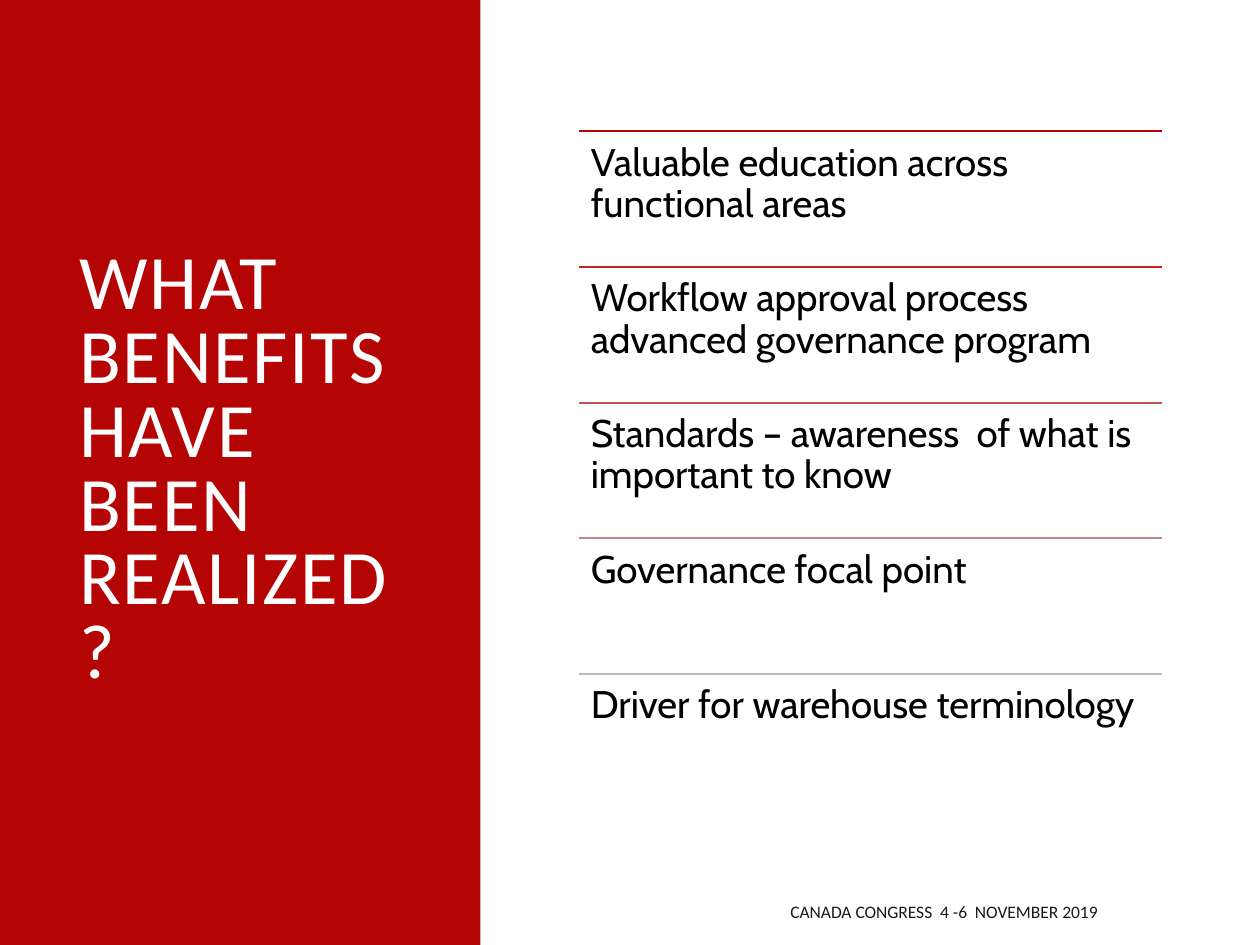
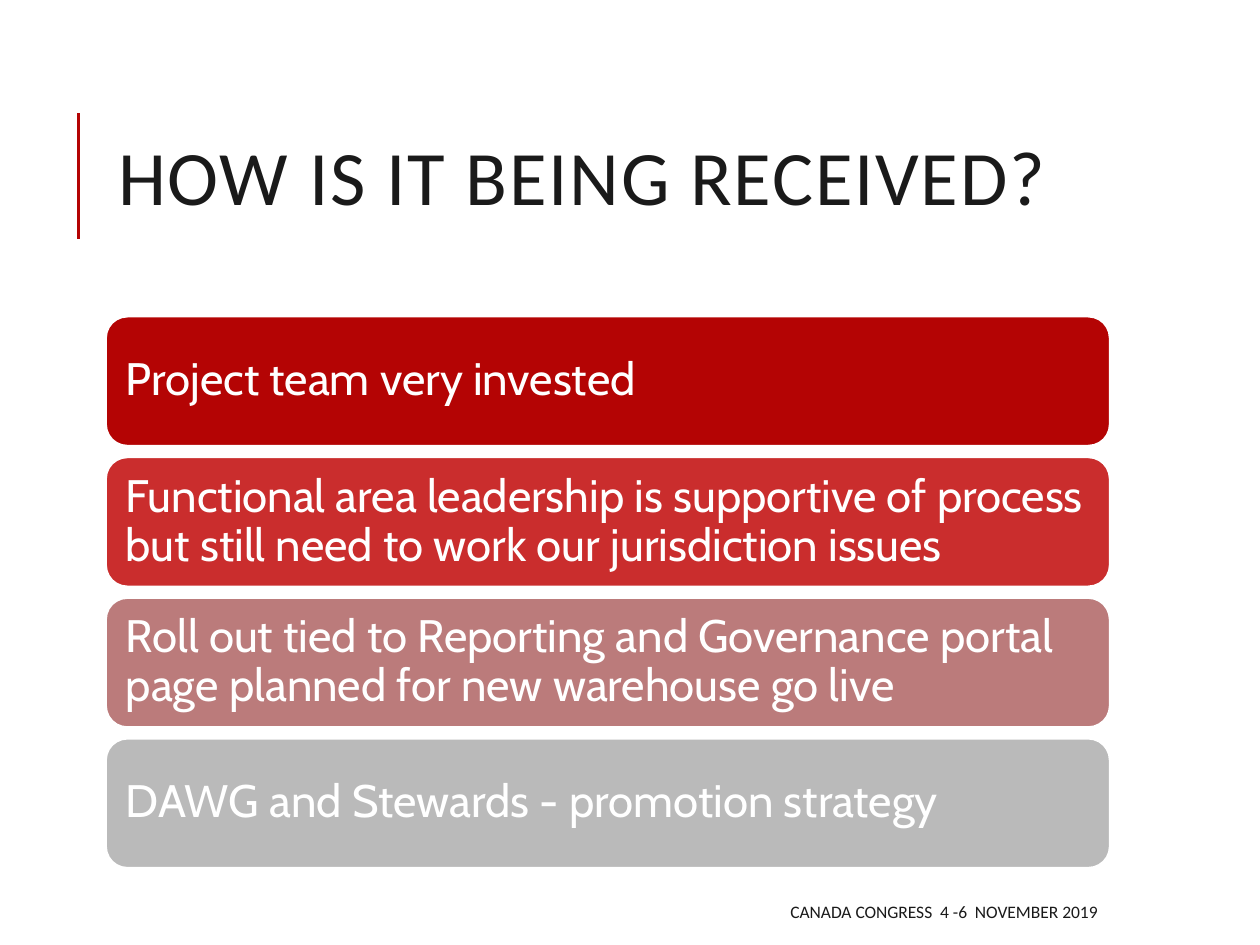
"""Build two slides on the benefits and the reception of a governance program."""
from lxml import etree
from pptx import Presentation
from pptx.dml.color import RGBColor
from pptx.enum.shapes import MSO_CONNECTOR, MSO_SHAPE
from pptx.enum.text import MSO_ANCHOR, PP_ALIGN
from pptx.oxml.ns import qn
from pptx.util import Pt

RED = RGBColor(0xB4, 0x04, 0x04)
GREY = RGBColor(0xBA, 0xBA, 0xBA)
INK = RGBColor(0x1A, 0x1A, 0x1A)
BLACK = RGBColor(0, 0, 0)
WHITE = RGBColor(0xFF, 0xFF, 0xFF)
STRAIGHT = MSO_CONNECTOR.STRAIGHT
RECTANGLE, ROUNDED = MSO_SHAPE.RECTANGLE, MSO_SHAPE.ROUNDED_RECTANGLE
TOP, MIDDLE = MSO_ANCHOR.TOP, MSO_ANCHOR.MIDDLE
LEFT, RIGHT = PP_ALIGN.LEFT, PP_ALIGN.RIGHT
HEADING_FONT, BODY_FONT = "Calibri", "Cabin"

FOOTER = "CANADA CONGRESS  4 -6  NOVEMBER 2019"
BENEFITS_TITLE = "WHAT BENEFITS HAVE BEEN REALIZED?"
BENEFITS = [
    ("Valuable education across functional areas", RED),
    ("Workflow approval process advanced governance program", RGBColor(0xC6, 0x21, 0x21)),
    ("Standards – awareness  of what is important to know", RGBColor(0xC2, 0x54, 0x54)),
    ("Governance focal point", RGBColor(0xB9, 0x8C, 0x8C)),
    ("Driver for warehouse terminology", GREY),
]
RECEPTION_TITLE = "HOW IS IT BEING RECEIVED?"
RECEPTION = [
    ("Project team very invested", RED),
    ("Functional area leadership is supportive of process but still need to work our "
     "jurisdiction issues", RGBColor(0xCA, 0x2D, 0x2D)),
    ("Roll out tied to Reporting and Governance portal page planned for new warehouse go live",
     RGBColor(0xBB, 0x7B, 0x7B)),
    ("DAWG and Stewards - promotion strategy", GREY),
]


def write(box, text, font, size, color, anchor=MIDDLE, align=LEFT, spacing=1.0, inset=None):
    frame = box.text_frame
    frame.word_wrap = True
    frame.vertical_anchor = anchor
    if inset is not None:
        frame.margin_left = frame.margin_right = Pt(inset)
        frame.margin_top = frame.margin_bottom = Pt(inset)
    para = frame.paragraphs[0]
    para.text = text
    para.alignment = align
    para.line_spacing = spacing
    para.font.name, para.font.size = font, Pt(size)
    para.font.color.rgb = color
    return para


def add_box(page, left, top, width, height):
    return page.shapes.add_textbox(Pt(left), Pt(top), Pt(width), Pt(height))


def add_shape(page, kind, left, top, width, height, fill):
    shape = page.shapes.add_shape(kind, Pt(left), Pt(top), Pt(width), Pt(height))
    shape.shadow.inherit = False
    shape.fill.solid()
    shape.fill.fore_color.rgb = fill
    shape.line.fill.background()
    return shape


def add_rule(page, x1, y1, x2, y2, color, weight):
    rule = page.shapes.add_connector(STRAIGHT, Pt(x1), Pt(y1), Pt(x2), Pt(y2))
    rule.line.color.rgb = color
    rule.line.width = Pt(weight)
    etree.SubElement(rule._element.spPr, qn("a:effectLst"))


def add_title(page, text, color, left, top, width, height):
    box = add_box(page, left, top, width, height)
    para = write(box, text, HEADING_FONT, 44, color, spacing=0.8)
    para._p.pPr.find(qn("a:defRPr")).set("spc", "100")


def add_footer(page):
    box = add_box(page, 285.8, 509.8, 348.5, 21.6)
    write(box, FOOTER, HEADING_FONT, 10, INK, align=RIGHT).space_after = Pt(6)


def build_benefits(page):
    add_shape(page, RECTANGLE, 0, 0, 274.5, 540, RED)
    add_title(page, BENEFITS_TITLE, WHITE, 38.2, 50.4, 201.6, 438.5)
    left, first_top, width, pitch = 331, 75, 333, 77.55
    for index, (benefit, color) in enumerate(BENEFITS):
        top = first_top + index * pitch
        add_rule(page, left, top, left + width, top, color, 1.25)
        box = add_box(page, left, top, width, pitch)
        write(box, benefit, BODY_FONT, 22, BLACK, anchor=TOP, spacing=0.9, inset=6.6)
    add_footer(page)


def build_reception(page):
    add_rule(page, 44.8, 64.8, 44.8, 136.8, RED, 1.5)
    left, width = 60.5, 573.8
    add_title(page, RECEPTION_TITLE, INK, left, 46, width, 118)
    first_top, height, pitch = 180.8, 74, 80.4
    for index, (reaction, color) in enumerate(RECEPTION):
        bar = add_shape(page, ROUNDED, left, first_top + index * pitch, width, height, color)
        bar.line.color.rgb = WHITE
        bar.line.width = Pt(1.25)
        write(bar, reaction, BODY_FONT, 26, WHITE, spacing=0.9, inset=7.8)
    add_footer(page)


def main():
    deck = Presentation()
    deck.slide_width, deck.slide_height = Pt(720), Pt(540)
    blank = deck.slide_layouts[6]
    for build in (build_benefits, build_reception):
        build(deck.slides.add_slide(blank))
    deck.save("out.pptx")


if __name__ == "__main__":
    main()
